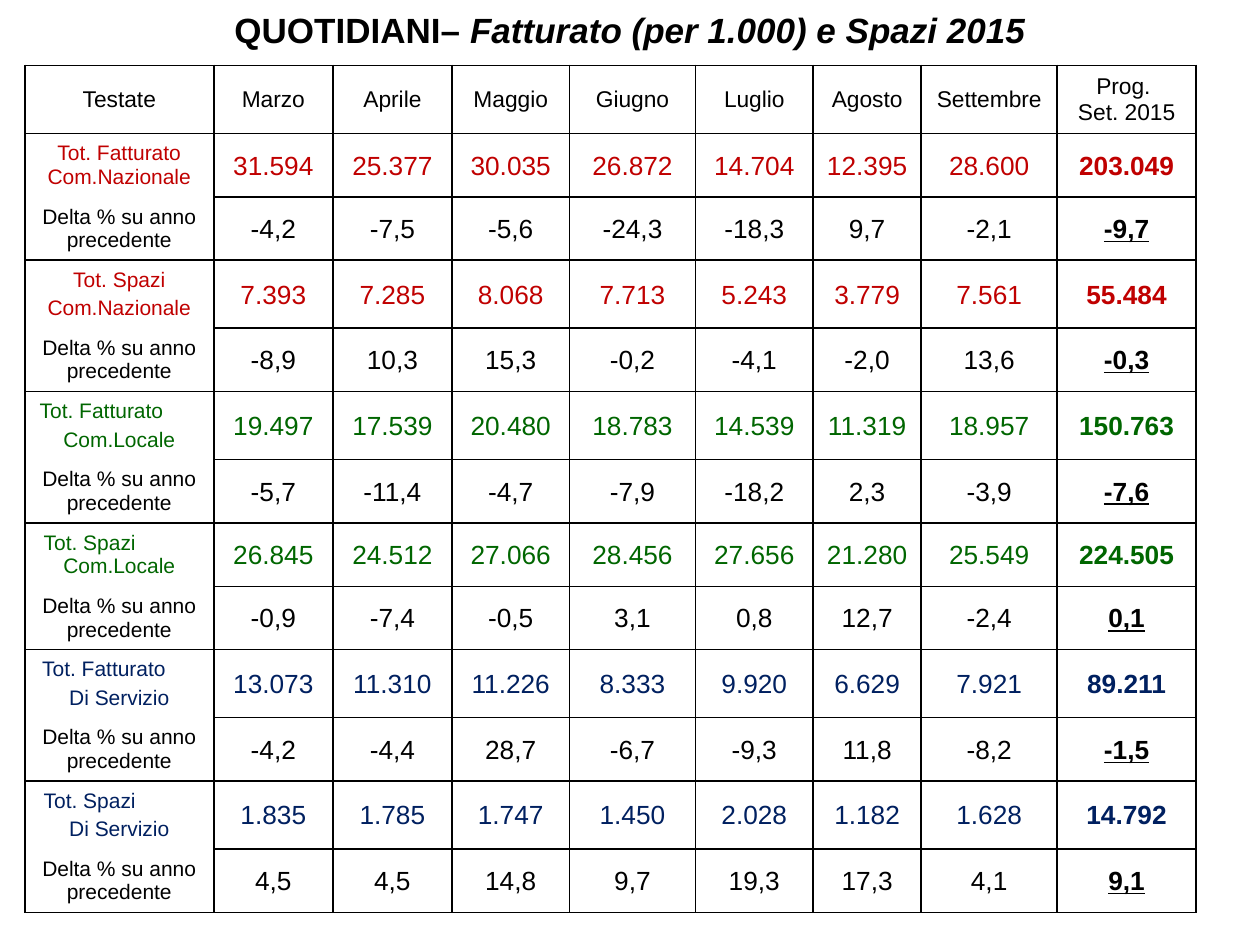
from lxml import etree
from pptx import Presentation
from pptx.dml.color import RGBColor
from pptx.enum import text
from pptx.oxml import ns
from pptx.util import Cm, Pt

COLOURS = {
    "black": "000000",
    "white": "FFFFFF",
    "national": "C00000",
    "local": "006600",
    "service": "002060",
}
HEADINGS = ["Testate", "Marzo", "Aprile", "Maggio", "Giugno", "Luglio",
            "Agosto", "Settembre", "Prog. \nSet. 2015"]
COLUMN_WIDTHS = [3.81, 2.4, 2.4, 2.37, 2.54, 2.37, 2.18, 2.74, 2.8]
TALL_ROW, SHORT_ROW = 1.37, 1.27
DELTA_LABEL = "Delta % su anno precedente"
SECTIONS = [
    ("Tot. Fatturato Com.Nazionale", "national", None, 0,
     "31.594 25.377 30.035 26.872 14.704 12.395 28.600 203.049",
     "-4,2 -7,5 -5,6 -24,3 -18,3 9,7 -2,1 -9,7"),
    ("Tot. Spazi\nCom.Nazionale", "national", None, 2.7,
     "7.393 7.285 8.068 7.713 5.243 3.779 7.561 55.484",
     "-8,9 10,3 15,3 -0,2 -4,1 -2,0 13,6 -0,3"),
    ("Tot. Fatturato\nCom.Locale", "local", 0.05, 2.7,
     "19.497 17.539 20.480 18.783 14.539 11.319 18.957 150.763",
     "-5,7 -11,4 -4,7 -7,9 -18,2 2,3 -3,9 -7,6"),
    ("Tot. Spazi\nCom.Locale", "local", 0.13, 0,
     "26.845 24.512 27.066 28.456 27.656 21.280 25.549 224.505",
     "-0,9 -7,4 -0,5 3,1 0,8 12,7 -2,4 0,1"),
    ("Tot. Fatturato\nDi Servizio", "service", 0.1, 2.7,
     "13.073 11.310 11.226 8.333 9.920 6.629 7.921 89.211",
     "-4,2 -4,4 28,7 -6,7 -9,3 11,8 -8,2 -1,5"),
    ("Tot. Spazi\nDi Servizio", "service", 0.13, 2.7,
     "1.835 1.785 1.747 1.450 2.028 1.182 1.628 14.792",
     "4,5 4,5 14,8 9,7 19,3 17,3 4,1 9,1"),
]


class Report:
    font_name = "Arial"
    border_width = Pt(1)

    def __init__(self, slide):
        self.slide = slide

    def style(self, run, size, colour="black", bold=False, italic=False, underline=False):
        font = run.font
        font.name = self.font_name
        font.size = Pt(size)
        font.bold = bold
        font.italic = italic
        font.underline = underline
        font.color.rgb = RGBColor.from_string(COLOURS[colour])

    def title(self, subject, detail):
        heading = self.slide.shapes.add_textbox(Cm(0), Cm(0.05), Cm(25.4), Cm(1.12))
        heading.text_frame.word_wrap = True
        line = heading.text_frame.paragraphs[0]
        line.alignment = text.PP_ALIGN.CENTER
        for words, italic in ((subject, False), (detail, True)):
            run = line.add_run()
            run.text = words
            self.style(run, 20, bold=True, italic=italic)

    def table(self, left, top, widths, heights):
        frame = self.slide.shapes.add_table(
            len(heights), len(widths), Cm(left), Cm(top), Cm(sum(widths)), Cm(sum(heights)))
        grid = frame.table
        grid.first_row = False
        grid.horz_banding = False
        for column, width in zip(grid.columns, widths):
            column.width = Cm(width)
        for row, height in zip(grid.rows, heights):
            row.height = Cm(height)
        return grid

    def borders(self, cell, open_side):
        properties = cell._tc.get_or_add_tcPr()
        for side in "LRTB":
            line = etree.SubElement(properties, ns.qn(f"a:ln{side}"), w=str(self.border_width))
            if side == open_side:
                etree.SubElement(line, ns.qn("a:noFill"))
            else:
                fill = etree.SubElement(line, ns.qn("a:solidFill"))
                etree.SubElement(fill, ns.qn("a:srgbClr"), val=COLOURS["black"])

    def cell(self, cell, words, size, open_side=None, gap=0, indent=None, tight=False, **look):
        self.borders(cell, open_side)
        cell.fill.solid()
        cell.fill.fore_color.rgb = RGBColor.from_string(COLOURS["white"])
        cell.vertical_anchor = text.MSO_ANCHOR.MIDDLE
        cell.margin_left = cell.margin_right = Cm(0.03 if tight else 0.25)
        cell.margin_top = Cm(0.03 if tight else 0.13)
        cell.margin_bottom = Cm(0 if tight else 0.13)
        cell.text_frame.text = words
        for number, line in enumerate(cell.text_frame.paragraphs):
            line.alignment = text.PP_ALIGN.CENTER
            if number:
                line.space_before = Pt(gap)
            elif indent is not None:
                line.alignment = text.PP_ALIGN.LEFT
                line._p.get_or_add_pPr().set("marL", str(Cm(indent)))
            for run in line.runs:
                self.style(run, size, **look)

    def values(self, cells, figures, colour="black", underline=False):
        for number, (cell, figure) in enumerate(zip(cells, figures), 1):
            progressive = number == len(figures)
            self.cell(cell, figure, 15, tight=True, colour=colour,
                      bold=progressive, underline=progressive and underline)


def main():
    deck = Presentation()
    deck.slide_width, deck.slide_height = Cm(25.4), Cm(19.05)
    report = Report(deck.slides.add_slide(deck.slide_layouts[6]))
    report.title("QUOTIDIANI– ", "Fatturato (per 1.000) e Spazi 2015")

    heights = [TALL_ROW]
    for section in SECTIONS:
        heights += [TALL_ROW if section[3] else SHORT_ROW, SHORT_ROW]
    grid = report.table(0.5, 1.32, COLUMN_WIDTHS, heights)
    rows = [list(row.cells) for row in grid.rows]

    for cell, heading in zip(rows[0], HEADINGS):
        report.cell(cell, heading, 13)
    for totals, deltas, section in zip(rows[1::2], rows[2::2], SECTIONS):
        label, colour, indent, gap, amounts, changes = section
        report.cell(totals[0], label, 12, open_side="B", gap=gap, indent=indent, colour=colour)
        report.cell(deltas[0], DELTA_LABEL, 12, open_side="T")
        report.values(totals[1:], amounts.split(), colour)
        report.values(deltas[1:], changes.split(), underline=True)

    deck.save("out.pptx")


if __name__ == "__main__":
    main()
